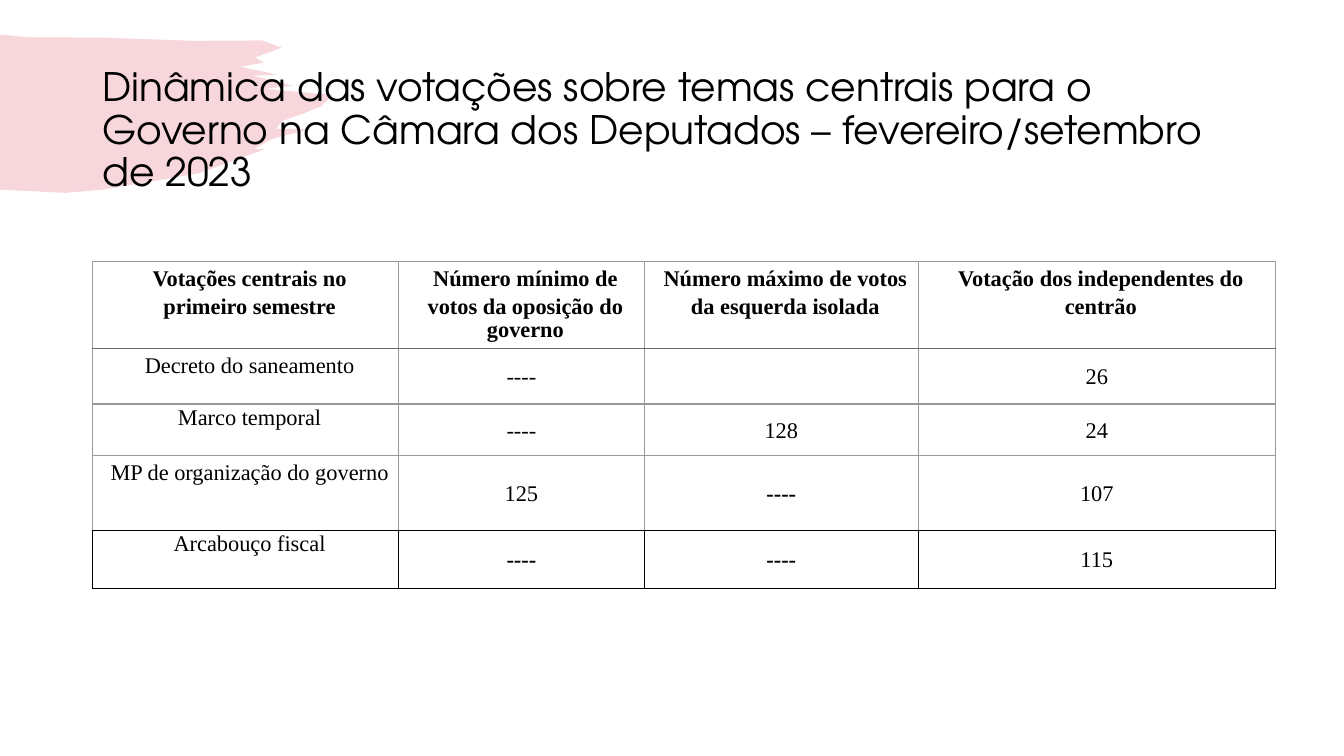
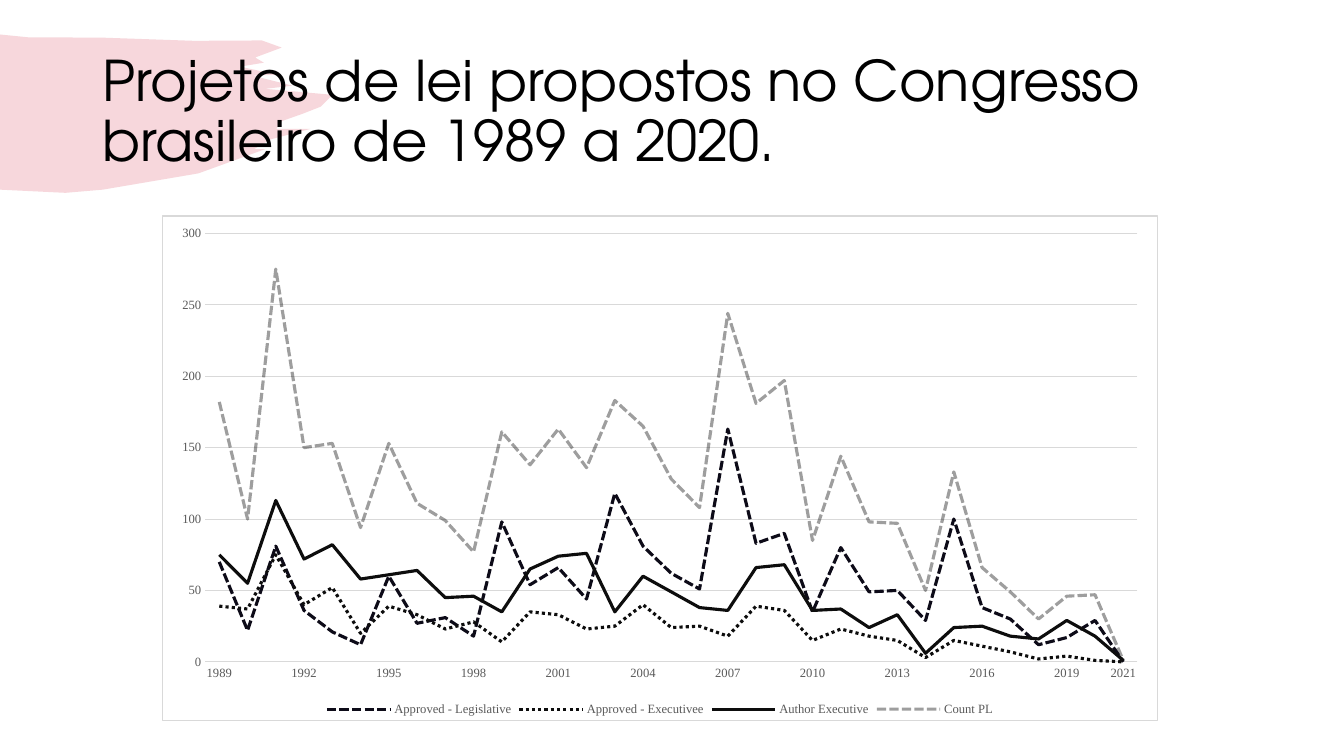
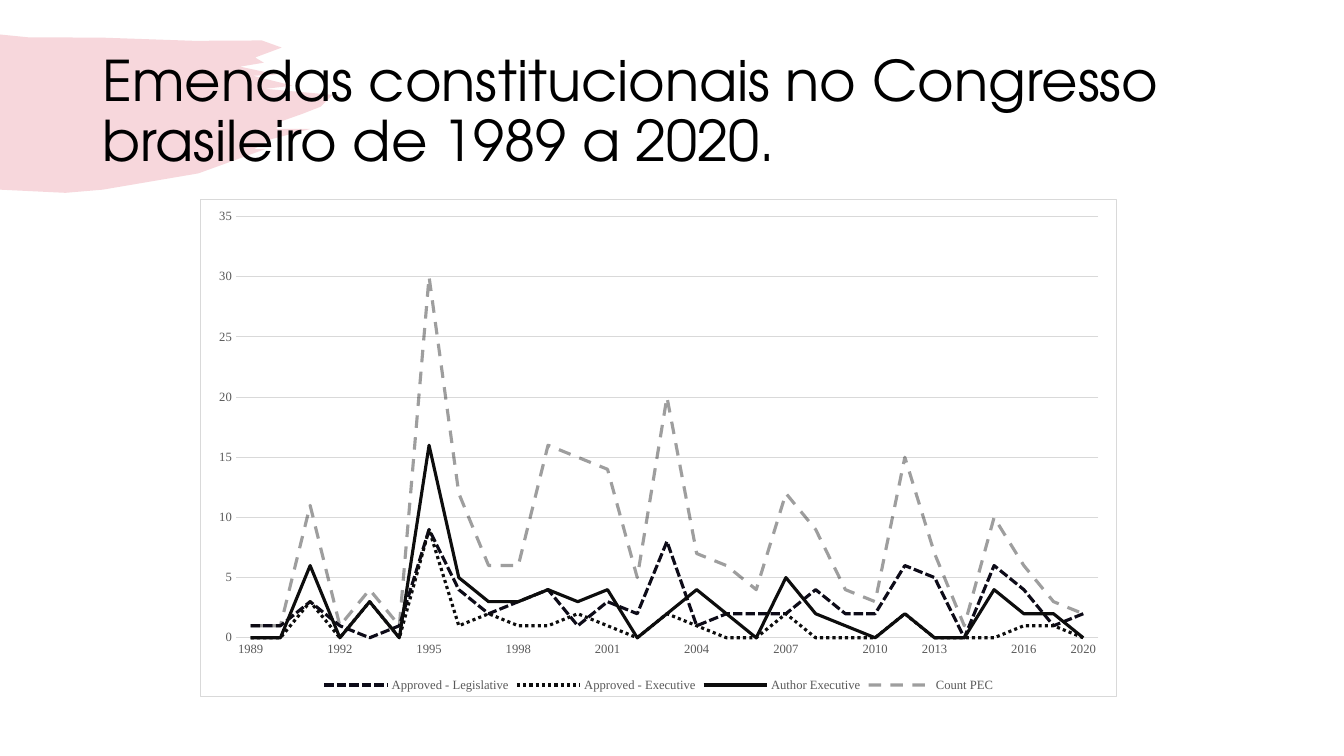
from lxml.etree import SubElement
from pptx import Presentation
from pptx.chart.data import CategoryChartData as ChartData
from pptx.dml.color import RGBColor
from pptx.enum.chart import XL_CHART_TYPE as Kind, XL_LEGEND_POSITION as Place, XL_TICK_MARK as Tick
from pptx.enum.dml import MSO_LINE as Dash
from pptx.enum.text import MSO_ANCHOR as Anchor, PP_ALIGN as Align
from pptx.oxml import parse_xml
from pptx.oxml.ns import nsdecls, qn
from pptx.util import Cm, Pt

BLACK = RGBColor(0x00, 0x00, 0x00)
WHITE = RGBColor(0xFF, 0xFF, 0xFF)
ROSE = RGBColor(0xD7, 0x38, 0x51)
NAVY = RGBColor(0x0D, 0x0B, 0x18)
INK = RGBColor(0x0D, 0x0D, 0x0D)
SLATE = RGBColor(0x59, 0x59, 0x59)
DARK = RGBColor(0x66, 0x66, 0x66)
GREY = RGBColor(0x99, 0x99, 0x99)
PALE = RGBColor(0xD9, 0xD9, 0xD9)
HEAD = "TeX Gyre Adventor"
BODY = "Times New Roman"

# Outline of the brush stroke in cm, clockwise from the top left
BRUSH = [(0, 0.87), (0.7, 0.94), (2.6, 0.95), (4.9, 1.03), (6.6, 1.02), (7.1, 1.2),
         (6.43, 1.45), (6.65, 1.58), (6.05, 1.68), (6.98, 1.88), (6.38, 1.91), (7.37, 2.16),
         (6.68, 2.24), (8.38, 2.39), (8.08, 2.69), (7.62, 2.87), (7.11, 3.05), (6.96, 3.25),
         (7.82, 3.25), (6.83, 3.51), (6.4, 3.76), (6.68, 3.76), (5, 4.37), (2.59, 4.78),
         (1.65, 4.86), (0, 4.78)]


def fade(node, share):
    """Give the first colour under node an opacity in percent."""
    color = next(node.iter(qn("a:srgbClr")))
    SubElement(color, qn("a:alpha")).set("val", str(share * 1000))


def start(title, size, top):
    """Add a slide with the brush stroke and its title."""
    slide = deck.slides.add_slide(deck.slide_layouts[6])
    first, *rest = [(Cm(x), Cm(y)) for x, y in BRUSH]
    pen = slide.shapes.build_freeform(*first)
    pen.add_line_segments(rest, close=True)
    stroke = pen.convert_to_shape()
    stroke.shadow.inherit = False
    stroke.fill.solid()
    stroke.fill.fore_color.rgb = ROSE
    fade(stroke.element.spPr, 20)
    stroke.line.fill.background()

    frame = slide.shapes.add_textbox(Cm(2.33), Cm(top), Cm(29.21), Cm(3.68)).text_frame
    frame.word_wrap = True
    frame.vertical_anchor = Anchor.MIDDLE
    para = frame.paragraphs[0]
    para.text = title
    para.line_spacing = 0.9
    para.font.name = HEAD
    para.font.size = Pt(size)
    para.font.color.rgb = BLACK
    return slide


deck = Presentation()
deck.slide_width, deck.slide_height = Cm(33.87), Cm(19.05)

# Votes table
slide = start("Dinâmica das votações sobre temas centrais para o Governo na Câmara dos "
              "Deputados – fevereiro/setembro de 2023", 28, 1.47)
WIDTHS = [7.7, 6.2, 6.9, 9]
# Height, line spacing of the label, texts
ROWS = [
    (2.19, 1.15, ["Votações centrais no primeiro semestre",
                  "Número mínimo de votos da oposição do\ngoverno",
                  "Número máximo de votos da esquerda isolada",
                  "Votação dos independentes do centrão"]),
    (1.4, 1.15, ["Decreto do saneamento", "----", "", "26"]),
    (1.3, 1, ["Marco temporal", "----", "128", "24"]),
    (1.88, 1.15, ["MP de organização do governo", "125", "----", "107"]),
    (1.47, 1, ["Arcabouço fiscal", "----", "----", "115"]),
]
BOLD = [(3, 2), (4, 1), (4, 2)]
RULES = [(GREY, 1), (DARK, 1.5), (GREY, 1), (GREY, 1), (BLACK, 1), (BLACK, 1)]
SIDES = [(GREY, 1)] * 4 + [(BLACK, 1)]

table = slide.shapes.add_table(len(ROWS), len(WIDTHS), Cm(2.34), Cm(6.58), Cm(sum(WIDTHS)),
                               Cm(sum(row[0] for row in ROWS))).table
table.first_row = table.horz_banding = False
for col, width in zip(table.columns, WIDTHS):
    col.width = Cm(width)
for r, (height, gap, texts) in enumerate(ROWS):
    table.rows[r].height = Cm(height)
    for c, text in enumerate(texts):
        cell = table.cell(r, c)
        label = r == 0 or c == 0
        cell.margin_left = cell.margin_right = Cm(0.23)
        cell.margin_top, cell.margin_bottom = Cm(0.03), 0
        cell.vertical_anchor = Anchor.TOP if label else Anchor.MIDDLE
        cell.text = text
        for n, para in enumerate(cell.text_frame.paragraphs):
            para.alignment = Align.CENTER
            para.font.name = BODY
            para.font.size = Pt(16)
            para.font.bold = r == 0 or (r, c) in BOLD
            para.font.color.rgb = BLACK
            if label:
                para.line_spacing = 0.91 if n else gap
                para._p.get_or_add_pPr().set("marL", str(Cm(0.2)))
        cell.fill.background()
        props = cell._tc.get_or_add_tcPr()
        edges = zip("LRTB", [SIDES[r], SIDES[r], RULES[r], RULES[r + 1]])
        for n, (side, (color, weight)) in enumerate(edges):
            props.insert(n, parse_xml(
                f'<a:ln{side} {nsdecls("a")} w="{Pt(weight)}"><a:solidFill>'
                f'<a:srgbClr val="{color}"/></a:solidFill></a:ln{side}>'))

# Line charts
BILLS = [
    ("Approved - Legislative",
     [70, 22, 81, 36, 21, 12, 60, 27, 31, 18, 98, 54, 66, 44, 118, 81, 62, 51, 163, 83, 90, 35,
      80, 49, 50, 29, 100, 38, 30, 12, 17, 29, 0]),
    ("Approved - Executivee",
     [39, 37, 75, 40, 52, 20, 39, 33, 23, 28, 14, 35, 33, 23, 25, 40, 24, 25, 18, 39, 36, 15,
      23, 18, 15, 3, 15, 11, 7, 2, 4, 1, 0]),
    ("Author Executive",
     [75, 55, 113, 72, 82, 58, 61, 64, 45, 46, 35, 65, 74, 76, 35, 60, 49, 38, 36, 66, 68, 36,
      37, 24, 33, 6, 24, 25, 18, 16, 29, 18, 1]),
    ("Count PL",
     [182, 100, 275, 150, 153, 94, 153, 111, 99, 77, 161, 138, 163, 136, 183, 165, 128, 108,
      244, 181, 197, 85, 144, 98, 97, 50, 133, 66, 49, 30, 46, 47, 1]),
]
AMENDS = [
    ("Approved - Legislative",
     [1, 1, 3, 1, 0, 1, 9, 4, 2, 3, 4, 1, 3, 2, 8, 1, 2, 2, 2, 4, 2, 2, 6, 5, 0, 6, 4, 1, 2]),
    ("Approved - Executive",
     [0, 0, 3, 0, 3, 0, 9, 1, 2, 1, 1, 2, 1, 0, 2, 1, 0, 0, 2, 0, 0, 0, 2, 0, 0, 0, 1, 1, 0]),
    ("Author Executive",
     [0, 0, 6, 0, 3, 0, 16, 5, 3, 3, 4, 3, 4, 0, 2, 4, 2, 0, 5, 2, 1, 0, 2, 0, 0, 4, 2, 2, 0]),
    ("Count PEC",
     [1, 1, 11, 1, 4, 1, 30, 12, 6, 6, 16, 15, 14, 5, 20, 7, 6, 4, 12, 9, 4, 3, 15, 7, 1, 10,
      6, 3, 2]),
]
# Title, box, last year, years left out, axis top, axis step, dash of the count, series
CHARTS = [
    ("Projetos de lei propostos no Congresso brasileiro de 1989 a 2020.",
     (4.08, 5.43, 25.1, 12.74), 2021, [], 300, 50, Dash.SQUARE_DOT, BILLS),
    ("Emendas constitucionais no Congresso brasileiro de 1989 a 2020.",
     (5.05, 5.01, 23.1, 12.55), 2020, [2012, 2018, 2019], 35, 5, Dash.DASH, AMENDS),
]
for title, box, last, skip, top, step, dash, lines in CHARTS:
    slide = start(title, 40, 1.02)
    years = [year for year in range(1989, last + 1) if year not in skip]
    data = ChartData()
    data.categories = [str(year) if (year - 1989) % 3 == 0 or year == last else ""
                       for year in years]
    for name, values in lines:
        data.add_series(name, values)
    chart = slide.shapes.add_chart(Kind.LINE, *map(Cm, box), data).chart
    chart.has_title = False
    chart.font.name = "Arial"
    chart.font.size = Pt(10)
    chart.font.color.rgb = BLACK
    chart.element.find(qn("c:chart")).addnext(parse_xml(
        f'<c:spPr {nsdecls("c", "a")}><a:solidFill><a:srgbClr val="{WHITE}"/></a:solidFill>'
        f'<a:ln w="{Pt(0.75)}"><a:solidFill><a:srgbClr val="{PALE}"/></a:solidFill></a:ln>'
        '</c:spPr>'))

    chart.has_legend = True
    chart.legend.position = Place.BOTTOM
    chart.legend.include_in_layout = False
    cats, vals = chart.category_axis, chart.value_axis
    for axis in (cats, vals):
        axis.major_tick_mark = axis.minor_tick_mark = Tick.NONE
    for font in (cats.tick_labels.font, vals.tick_labels.font, chart.legend.font):
        font.name = BODY
        font.size = Pt(9)
        font.color.rgb = SLATE
    vals.minimum_scale, vals.maximum_scale, vals.major_unit = 0, top, step
    vals.has_major_gridlines = True
    for line in (cats.format.line, vals.major_gridlines.format.line):
        line.color.rgb = PALE
        line.width = Pt(0.75)
    vals.format.line.fill.background()

    plot = chart.plots[0]
    plot.vary_by_categories = False
    looks = [(NAVY, Dash.SQUARE_DOT), (INK, Dash.ROUND_DOT), (INK, Dash.SOLID), (INK, dash)]
    for series, (color, style) in zip(plot.series, looks):
        series.smooth = False
        line = series.format.line
        line.color.rgb = color
        line.width = Pt(2.25)
        line.dash_style = style
    fade(plot.series[3]._element, 40)

deck.save("out.pptx")
